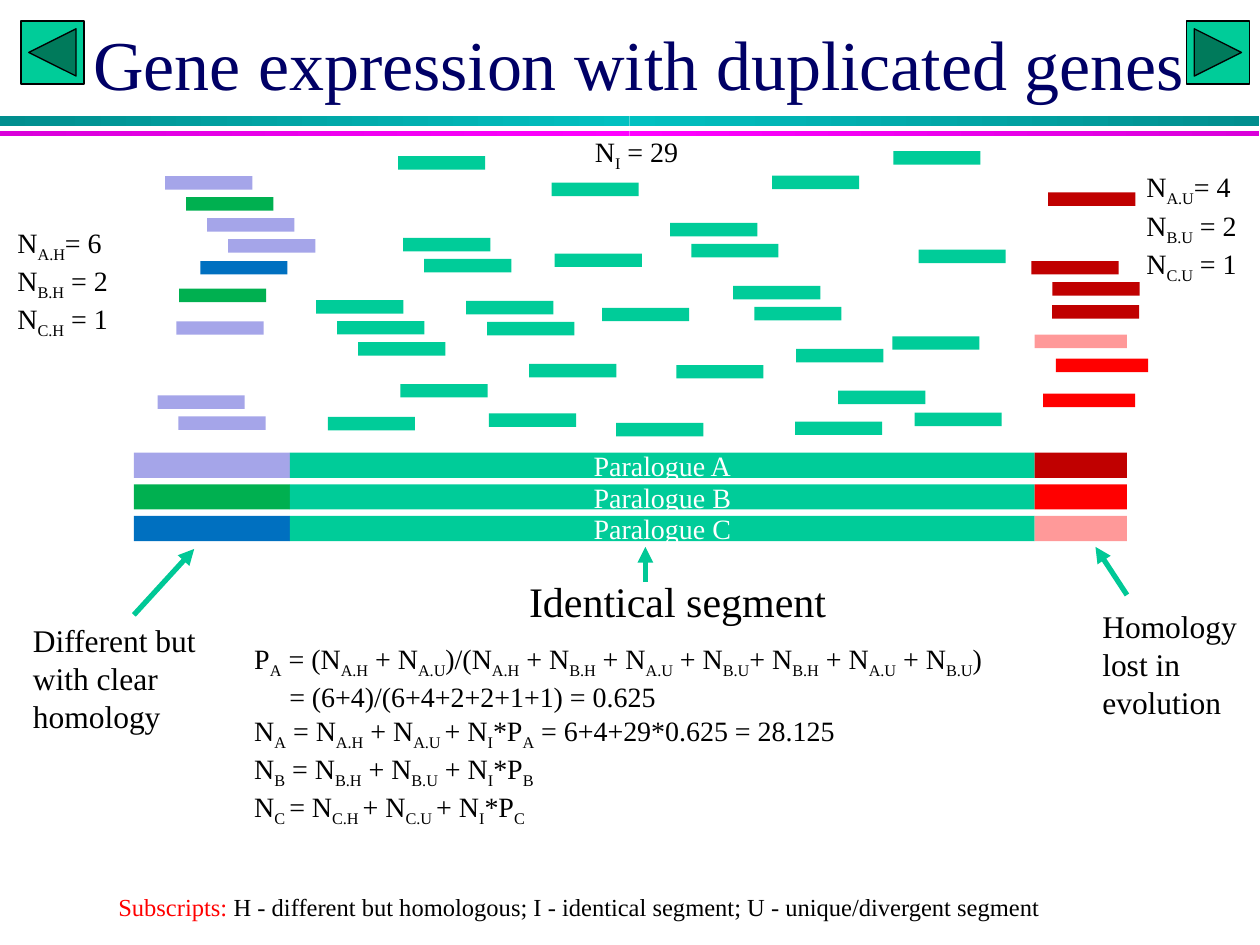
from lxml.etree import SubElement
from pptx import Presentation
from pptx.dml.color import RGBColor
from pptx.enum.shapes import MSO_CONNECTOR, MSO_SHAPE
from pptx.enum.text import MSO_ANCHOR, MSO_AUTO_SIZE, PP_ALIGN
from pptx.oxml.ns import qn
from pptx.util import Pt

BLACK = RGBColor(0x00, 0x00, 0x00)
WHITE = RGBColor(0xFF, 0xFF, 0xFF)
NAVY = RGBColor(0x00, 0x00, 0x66)
TEAL = RGBColor(0x00, 0xCC, 0x99)
ARROW = RGBColor(0x00, 0xC8, 0x96)
LILAC = RGBColor(0xA5, 0xA5, 0xE9)
GREEN = RGBColor(0x00, 0xB0, 0x50)
BLUE = RGBColor(0x00, 0x70, 0xC0)
DARK_RED = RGBColor(0xC0, 0x00, 0x00)
RED = RGBColor(0xFF, 0x00, 0x00)
PINK = RGBColor(0xFF, 0x99, 0x99)
CYAN_EDGE, CYAN = RGBColor(0x00, 0x8E, 0x8E), RGBColor(0x00, 0xC0, 0xC0)
MAGENTA_EDGE, MAGENTA = RGBColor(0xDA, 0x00, 0xDA), RGBColor(0xFF, 0x00, 0xFF)
FONT = "Times New Roman"

# Header rules: top, height, edge colour, middle colour
RULES = [(66.2, 5.8, CYAN_EDGE, CYAN), (74.9, 2.9, MAGENTA_EDGE, MAGENTA)]
BUTTONS = [(12, MSO_SHAPE.ACTION_BUTTON_BACK_OR_PREVIOUS),
           (678, MSO_SHAPE.ACTION_BUTTON_FORWARD_OR_NEXT)]

# Paralogues: name, homologous colour, unique colour
PARALOGUES = [("Paralogue A", LILAC, DARK_RED),
              ("Paralogue B", GREEN, RED),
              ("Paralogue C", BLUE, PINK)]
SEGMENT_EDGES = [76.5, 165.7, 591.2, 643.9]
SEGMENT_TOP, SEGMENT_STEP, SEGMENT_HEIGHT = 258.7, 18.05, 14.4

# Reads: left, top, then one colour for each step of the staircase
READ_WIDTH, READ_HEIGHT, READ_STEP = 49.8, 7.7, 12
READS = [
    # identical segment
    (227.5, 89.3, [TEAL]), (510.5, 86.4, [TEAL]),
    (315.2, 104.4, [TEAL]), (441.2, 100.4, [TEAL]),
    (383, 127.4, [TEAL] * 2), (230.4, 136, [TEAL] * 2),
    (317, 144.9, [TEAL]), (524.9, 142.7, [TEAL]),
    (419, 163.4, [TEAL] * 2), (180.7, 171.5, [TEAL] * 3),
    (266.4, 172, [TEAL] * 2), (344, 175.9, [TEAL]),
    (302.4, 208, [TEAL]), (386.5, 208.6, [TEAL]),
    (509.9, 192.2, [TEAL]), (455, 199.4, [TEAL]),
    (479, 223.3, [TEAL]), (228.8, 219.5, [TEAL]),
    (187.3, 238.3, [TEAL]), (279.4, 236.2, [TEAL]),
    (352.1, 241.7, [TEAL]), (454.3, 240.9, [TEAL]),
    (522.6, 235.8, [TEAL]),
    # different but homologous
    (94.4, 100.7, [LILAC, GREEN, LILAC, LILAC]),
    (114.5, 149.2, [BLUE]), (102.3, 165, [GREEN]),
    (100.8, 183.6, [LILAC]), (90, 226, [LILAC] * 2),
    # unique
    (599, 110, [DARK_RED]), (589.4, 149.2, [DARK_RED] * 2),
    (601.2, 174.4, [DARK_RED]),
]
WIDE_READ_WIDTH = 52.7
WIDE_READS = [(591.2, 191.3, PINK), (603.4, 205, RED), (596, 225, RED)]

# Arrows: start x, start y, end x, end y
ARROWS = [(76.5, 351.4, 111, 313.7), (644, 340, 626, 312.5),
          (368.8, 332.6, 368.8, 312.5)]

# Texts: square brackets hold subscripts
LABELS = [
    ((295.2, 325.4, 195.8, 36), ["Identical segment"], 24),
    ((11.7, 351.4, 118.8, 72.7), ["Different but with clear homology"], 18),
    ((622.8, 343.4, 94.3, 72.7), ["Homology lost in evolution"], 18),
    ((2.9, 125.3, 74.9, 65.5),
     ["N[A.H]= 6", "N[B.H] = 2", "N[C.H] = 1"], 16),
    ((648, 93.6, 72, 65.5),
     ["N[A.U]= 4", "N[B.U] = 2", "N[C.U] = 1"], 16),
    ((332.9, 73.4, 72, 26.6), ["N[I] = 29"], 16),
]
FORMULAS = [
    "P[A  ]= (N[A.H] + N[A.U])/(N[A.H] + N[B.H] + N[A.U] + N[B.U]"
    "+ N[B.H] + N[A.U] + N[B.U])",
    "= (6+4)/(6+4+2+2+1+1) = 0.625",
    "N[A] = N[A.H] + N[A.U ]+ N[I]*P[A] = 6+4+29*0.625 = 28.125",
    "N[B] = N[B.H] + N[B.U] + N[I]*P[B]",
    "N[C ]= N[C.H ]+ N[C.U ]+ N[I]*P[C]",
]
LEGEND_LEAD = "Subscripts: "
LEGEND = "H - different but homologous; I - identical segment; U - unique/divergent segment"


def add_run(paragraph, text, size, color, subscript=False):
    run = paragraph.add_run()
    run.text = text
    run.font.name, run.font.size = FONT, Pt(size)
    run.font.color.rgb = color
    if subscript:
        run.font._element.set("baseline", "-25000")


def write_text(shape, lines, size=16, color=BLACK, align=PP_ALIGN.LEFT,
               anchor=MSO_ANCHOR.TOP, wrap=True, lead="", indents=()):
    frame = shape.text_frame
    frame.word_wrap, frame.vertical_anchor = wrap, anchor
    for number, line in enumerate(lines):
        paragraph = frame.paragraphs[0] if number == 0 else frame.add_paragraph()
        paragraph.alignment = align
        if number in indents:
            paragraph._p.get_or_add_pPr().set("marL", str(Pt(20)))
        if lead:
            add_run(paragraph, lead, size, RED)
        for position, piece in enumerate(line.replace("]", "[").split("[")):
            if piece:
                add_run(paragraph, piece, size, color, position % 2 == 1)


def add_box(left, top, width, height, color, kind=MSO_SHAPE.RECTANGLE):
    shape = slide.shapes.add_shape(kind, Pt(left), Pt(top), Pt(width), Pt(height))
    shape.shadow.inherit = False
    shape.fill.solid()
    shape.fill.fore_color.rgb = color
    shape.line.fill.background()
    return shape


def add_label(place, lines, size=16, **text_format):
    box = slide.shapes.add_textbox(*map(Pt, place))
    write_text(box, lines, size, **text_format)
    box.text_frame.auto_size = MSO_AUTO_SIZE.NONE


def add_arrow(start_x, start_y, end_x, end_y):
    arrow = slide.shapes.add_connector(
        MSO_CONNECTOR.STRAIGHT, Pt(start_x), Pt(start_y), Pt(end_x), Pt(end_y))
    arrow.line.color.rgb, arrow.line.width = ARROW, Pt(3)
    SubElement(arrow.line._get_or_add_ln(), qn("a:tailEnd"), type="triangle")
    SubElement(arrow._element.spPr, qn("a:effectLst"))


presentation = Presentation()
presentation.slide_width, presentation.slide_height = Pt(720), Pt(540)
slide = presentation.slides.add_slide(presentation.slide_layouts[6])

# Header
for top, height, edge, middle in RULES:
    for left, colors in ((0, (edge, middle)), (359.65, (middle, edge))):
        half = add_box(left, top, 359.65, height, edge)
        half.fill.gradient()
        half.fill.gradient_angle = 0
        for stop, color in zip(half.fill.gradient_stops, colors):
            stop.color.rgb = color
for left, kind in BUTTONS:
    button = add_box(left, 12, 36, 36, TEAL, kind)
    button.line.color.rgb, button.line.width = BLACK, Pt(0.75)
add_label((42.5, 0, 645.1, 72), ["Gene expression with duplicated genes"], 40,
          color=NAVY, align=PP_ALIGN.CENTER, anchor=MSO_ANCHOR.MIDDLE, wrap=False)

# Reads
for left, top, colors in READS:
    for step, color in enumerate(colors):
        add_box(left + step * READ_STEP, top + step * READ_STEP,
                READ_WIDTH, READ_HEIGHT, color)
for left, top, color in WIDE_READS:
    add_box(left, top, WIDE_READ_WIDTH, READ_HEIGHT, color)

# Paralogue bars
for row, (name, homologous, unique) in enumerate(PARALOGUES):
    top = SEGMENT_TOP + row * SEGMENT_STEP
    for left, right, color in zip(SEGMENT_EDGES, SEGMENT_EDGES[1:],
                                  (homologous, TEAL, unique)):
        segment = add_box(left, top, right - left, SEGMENT_HEIGHT, color)
        if color == TEAL:
            write_text(segment, [name], color=WHITE, align=PP_ALIGN.CENTER,
                       anchor=MSO_ANCHOR.MIDDLE)

# Labels, formulas, arrows and legend
for place, lines, size in LABELS:
    add_label(place, lines, size)
add_label((138.2, 362.9, 475.9, 104.4), FORMULAS, indents=(1,))
for arrow_ends in ARROWS:
    add_arrow(*arrow_ends)
add_label((60.5, 506.2, 553.7, 24.5), [LEGEND], 14, lead=LEGEND_LEAD)

presentation.save("out.pptx")
